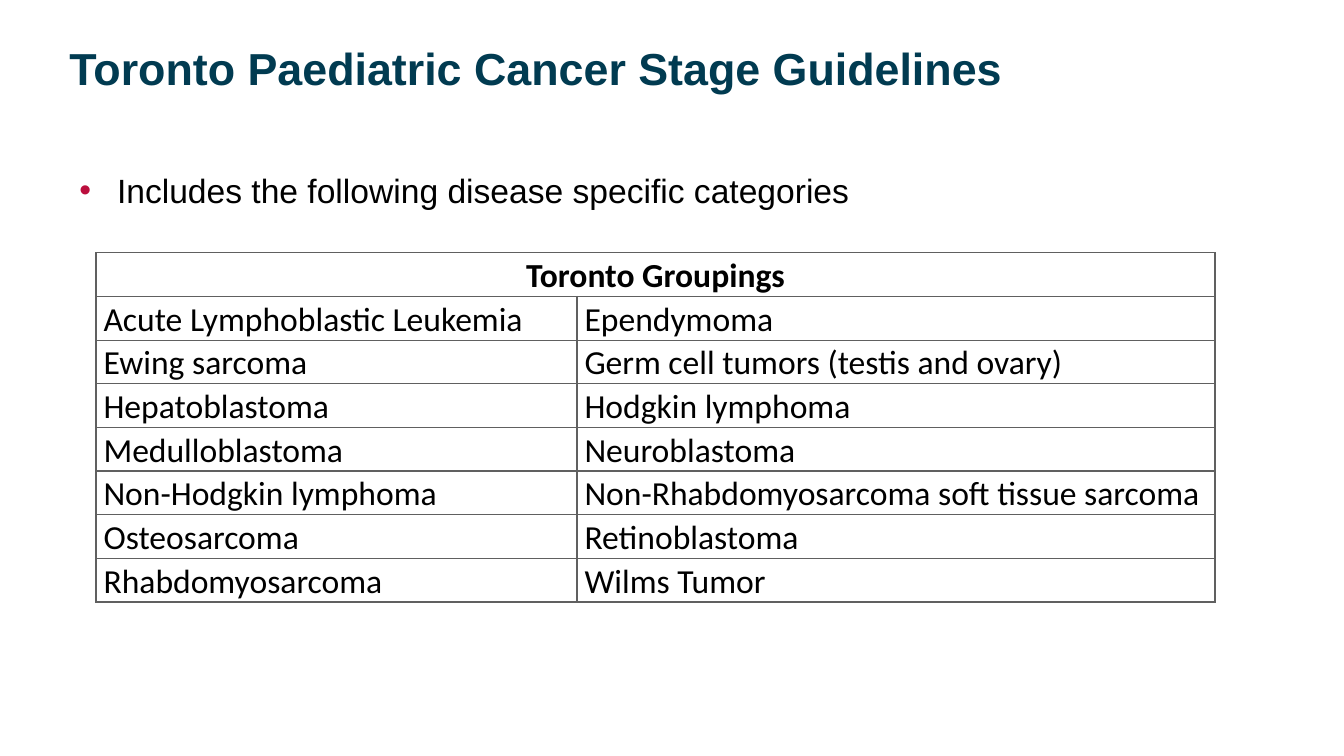
import dataclasses

import lxml.etree
import pptx
import pptx.dml.color
import pptx.enum.text
import pptx.oxml
import pptx.oxml.ns
import pptx.presentation
import pptx.slide
import pptx.table
import pptx.text.text
import pptx.util

Cm = pptx.util.Cm
Pt = pptx.util.Pt
Align = pptx.enum.text.PP_ALIGN
Anchor = pptx.enum.text.MSO_ANCHOR

HUES = {"title": "013B51", "text": "000000", "dot": "BB0E3D", "rule": "606060"}


@dataclasses.dataclass(frozen=True)
class Style:
    font: str
    size: int
    hue: str = "text"
    bold: bool = False


@dataclasses.dataclass(frozen=True)
class Box:
    text: str
    style: Style
    top: float
    height: float
    pad: tuple[float, float]
    anchor: Anchor
    dot: bool = False


HEAD = Style("Calibri", 24, bold=True)
BODY = Style("Calibri", 24)

BOXES = [
    Box("Toronto Paediatric Cancer Stage Guidelines",
        Style("Arial", 32, "title", True), 0.74, 1.65, (0, 0), Anchor.BOTTOM),
    Box("Includes the following disease specific categories",
        Style("Arial", 24), 4.14, 12.45, (0.25, 0.13), Anchor.TOP, True),
]

GROUPS = [
    ("Acute Lymphoblastic Leukemia", "Ependymoma"),
    ("Ewing sarcoma", "Germ cell tumors (testis and ovary)"),
    ("Hepatoblastoma", "Hodgkin lymphoma"),
    ("Medulloblastoma", "Neuroblastoma"),
    ("Non-Hodgkin lymphoma", "Non-Rhabdomyosarcoma soft tissue sarcoma"),
    ("Osteosarcoma", "Retinoblastoma"),
    ("Rhabdomyosarcoma", "Wilms Tumor"),
]
WIDTHS = (12.12, 16.08)
ROW = 1.1


def add_run(para: pptx.text.text._Paragraph, text: str, style: Style) -> None:
    run = para.add_run()
    run.text = text
    font = run.font
    font.name, font.size, font.bold = style.font, Pt(style.size), style.bold
    font.color.rgb = pptx.dml.color.RGBColor.from_string(HUES[style.hue])


def add_dot(para: pptx.text.text._Paragraph) -> None:
    """Give the paragraph a coloured bullet with a hanging indent."""
    props = para._p.get_or_add_pPr()
    props.set("marL", str(Cm(0.95)))
    props.set("indent", str(-Cm(0.95)))
    tag = pptx.oxml.ns.qn
    hue = lxml.etree.SubElement(props, tag("a:buClr"))
    lxml.etree.SubElement(hue, tag("a:srgbClr")).set("val", HUES["dot"])
    lxml.etree.SubElement(props, tag("a:buFont")).set("typeface", "Arial")
    lxml.etree.SubElement(props, tag("a:buChar")).set("char", "•")


def add_box(slide: pptx.slide.Slide, box: Box) -> None:
    shape = slide.shapes.add_textbox(Cm(1.75), Cm(box.top), Cm(26.44), Cm(box.height))
    frame = shape.text_frame
    frame.word_wrap = True
    frame.vertical_anchor = box.anchor
    frame.margin_left = frame.margin_right = Cm(box.pad[0])
    frame.margin_top = frame.margin_bottom = Cm(box.pad[1])
    para = frame.paragraphs[0]
    if box.dot:
        add_dot(para)
    add_run(para, box.text, box.style)


def add_rules(cell: pptx.table._Cell) -> None:
    """Draw a thin line on all four sides of the cell."""
    tag = pptx.oxml.ns.qn
    props = cell._tc.get_or_add_tcPr()
    for side in "LRTB":
        line = lxml.etree.SubElement(props, tag(f"a:ln{side}"), w=str(Pt(1)))
        fill = lxml.etree.SubElement(line, tag("a:solidFill"))
        lxml.etree.SubElement(fill, tag("a:srgbClr")).set("val", HUES["rule"])


def fill_cell(cell: pptx.table._Cell, text: str, style: Style, align: Align) -> None:
    cell.margin_left = cell.margin_right = Cm(0.19)
    cell.margin_top = cell.margin_bottom = 0
    add_rules(cell)
    cell.fill.background()
    para = cell.text_frame.paragraphs[0]
    para.alignment = align
    para.line_spacing = 1.07
    if text:
        add_run(para, text, style)


def add_grid(slide: pptx.slide.Slide) -> None:
    count = len(GROUPS) + 1
    frame = slide.shapes.add_table(count, len(WIDTHS), Cm(2.42), Cm(6.37),
                                   Cm(sum(WIDTHS)), Cm(ROW * count))
    table = frame.table
    table.first_row = table.horz_banding = False
    for col, width in zip(table.columns, WIDTHS):
        col.width = Cm(width)
    for row in table.rows:
        row.height = Cm(ROW)
    table.cell(0, 0).merge(table.cell(0, 1))
    for r, texts in enumerate([("Toronto Groupings", ""), *GROUPS]):
        style, align = (BODY, Align.LEFT) if r else (HEAD, Align.CENTER)
        for c, text in enumerate(texts):
            fill_cell(table.cell(r, c), text, style, align)


def main() -> None:
    deck = pptx.Presentation()
    deck.slide_width, deck.slide_height = Cm(33.87), Cm(19.05)
    slide = deck.slides.add_slide(deck.slide_layouts[6])
    for box in BOXES:
        add_box(slide, box)
    add_grid(slide)
    deck.save("out.pptx")


if __name__ == "__main__":
    main()
